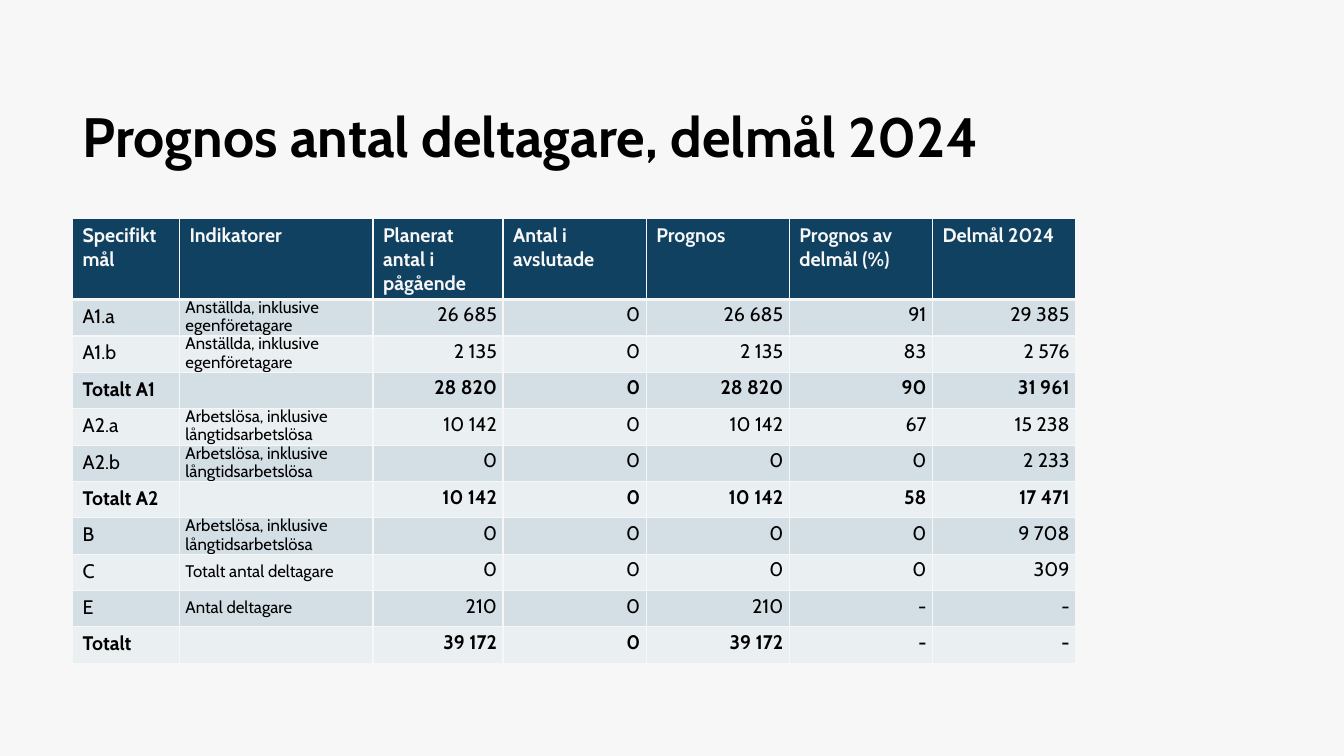
import lxml.etree
import pptx
import pptx.dml.color
import pptx.enum.text
import pptx.oxml.ns
import pptx.util

RGBColor = pptx.dml.color.RGBColor
BLACK = RGBColor(0x00, 0x00, 0x00)
PAPER = RGBColor(0xF8, 0xF7, 0xF7)
NAVY = RGBColor(0x10, 0x41, 0x61)
BAND_DARK = RGBColor(0xD3, 0xDE, 0xE5)
BAND_LIGHT = RGBColor(0xEA, 0xEF, 0xF2)

EMU_PER_PX = 9144
MIDDLE = pptx.enum.text.MSO_ANCHOR.MIDDLE
LEFT = pptx.enum.text.PP_ALIGN.LEFT
RIGHT = pptx.enum.text.PP_ALIGN.RIGHT

COLUMN_WIDTHS = [106, 192, 129] + [142] * 4
HEADER_HEIGHT = 71
ROW_HEIGHT = 36
HEADERS = ["Specifikt mål", "Indikatorer", "Planerat antal i pågående",
           "Antal i avslutade", "Prognos", "Prognos av delmål (%)", "Delmål 2024"]
EMPLOYED = "Anställda, inklusive egenföretagare"
UNEMPLOYED = "Arbetslösa, inklusive långtidsarbetslösa"
ROWS = [
    ["A1.a", EMPLOYED, "26 685", "0", "26 685", "91", "29 385"],
    ["A1.b", EMPLOYED, "2 135", "0", "2 135", "83", "2 576"],
    ["Totalt A1", "", "28 820", "0", "28 820", "90", "31 961"],
    ["A2.a", UNEMPLOYED, "10 142", "0", "10 142", "67", "15 238"],
    ["A2.b", UNEMPLOYED, "0", "0", "0", "0", "2 233"],
    ["Totalt A2", "", "10 142", "0", "10 142", "58", "17 471"],
    ["B", UNEMPLOYED, "0", "0", "0", "0", "9 708"],
    ["C", "Totalt antal deltagare", "0", "0", "0", "0", "309"],
    ["E", "Antal deltagare", "210", "0", "210", "-", "-"],
    ["Totalt", "", "39 172", "0", "39 172", "-", "-"],
]


def px(length):
    return pptx.util.Emu(length * EMU_PER_PX)


class SlideBuilder:
    font_name = "Cabin"

    def __init__(self, slide):
        self.slide = slide
        slide.background.fill.solid()
        slide.background.fill.fore_color.rgb = PAPER

    def style_font(self, paragraph, size, color, bold):
        font = paragraph.font
        font.name = self.font_name
        font.size = pptx.util.Pt(size)
        font.color.rgb = color
        font.bold = bold

    def title(self, text, left, top, width, height):
        shape = self.slide.shapes.add_textbox(px(left), px(top), px(width), px(height))
        frame = shape.text_frame
        frame.word_wrap = True
        frame.vertical_anchor = MIDDLE
        frame.text = text
        self.style_font(frame.paragraphs[0], 39.6, BLACK, True)

    def borders(self, cell, top=1, bottom=1):
        properties = cell._tc.get_or_add_tcPr()
        for side, width in (("L", 1), ("R", 1), ("T", top), ("B", bottom)):
            line = lxml.etree.SubElement(properties, pptx.oxml.ns.qn("a:ln" + side),
                                         w=str(pptx.util.Pt(width)))
            fill = lxml.etree.SubElement(line, pptx.oxml.ns.qn("a:solidFill"))
            lxml.etree.SubElement(fill, pptx.oxml.ns.qn("a:srgbClr"), val=str(PAPER))

    def cell(self, cell, text, fill, size=14, color=BLACK, bold=False):
        cell.text = text
        cell.fill.solid()
        cell.fill.fore_color.rgb = fill
        self.style_font(cell.text_frame.paragraphs[0], size, color, bold)

    def tighten(self, cell, alignment):
        cell.vertical_anchor = MIDDLE
        cell.margin_left = cell.margin_right = px(6)
        cell.margin_top = cell.margin_bottom = 0
        paragraph = cell.text_frame.paragraphs[0]
        paragraph.alignment = alignment
        paragraph.line_spacing = pptx.util.Pt(13)
        paragraph.space_after = pptx.util.Pt(2)

    def table(self, headers, rows, left, top, width, height):
        shape = self.slide.shapes.add_table(len(rows) + 1, len(headers), px(left), px(top),
                                            px(width), px(height))
        table = shape.table
        table.horz_banding = False
        for column, column_width in zip(table.columns, COLUMN_WIDTHS):
            column.width = px(column_width)
        for row in table.rows:
            row.height = px(ROW_HEIGHT)
        table.rows[0].height = px(HEADER_HEIGHT)
        shape.height = px(height)

        for column_index, text in enumerate(headers):
            cell = table.cell(0, column_index)
            self.borders(cell, bottom=3)
            self.cell(cell, text, NAVY, color=PAPER, bold=True)

        for row_index, values in enumerate(rows, start=1):
            fill = BAND_DARK if row_index % 2 else BAND_LIGHT
            is_total = values[0].startswith("Totalt")
            for column_index, text in enumerate(values):
                cell = table.cell(row_index, column_index)
                self.borders(cell, top=3 if row_index == 1 else 1)
                size = 12 if column_index == 1 else 14
                self.cell(cell, text, fill, size=size, bold=is_total)
                if column_index:
                    self.tighten(cell, LEFT if column_index == 1 else RIGHT)


def main():
    presentation = pptx.Presentation()
    presentation.slide_width = px(1333)
    presentation.slide_height = px(750)
    builder = SlideBuilder(presentation.slides.add_slide(presentation.slide_layouts[6]))
    builder.title("Prognos antal deltagare, delmål 2024", 72, 62, 997, 145)
    builder.table(HEADERS, ROWS, 72, 217, 997, 439)
    presentation.save("out.pptx")


if __name__ == "__main__":
    main()
